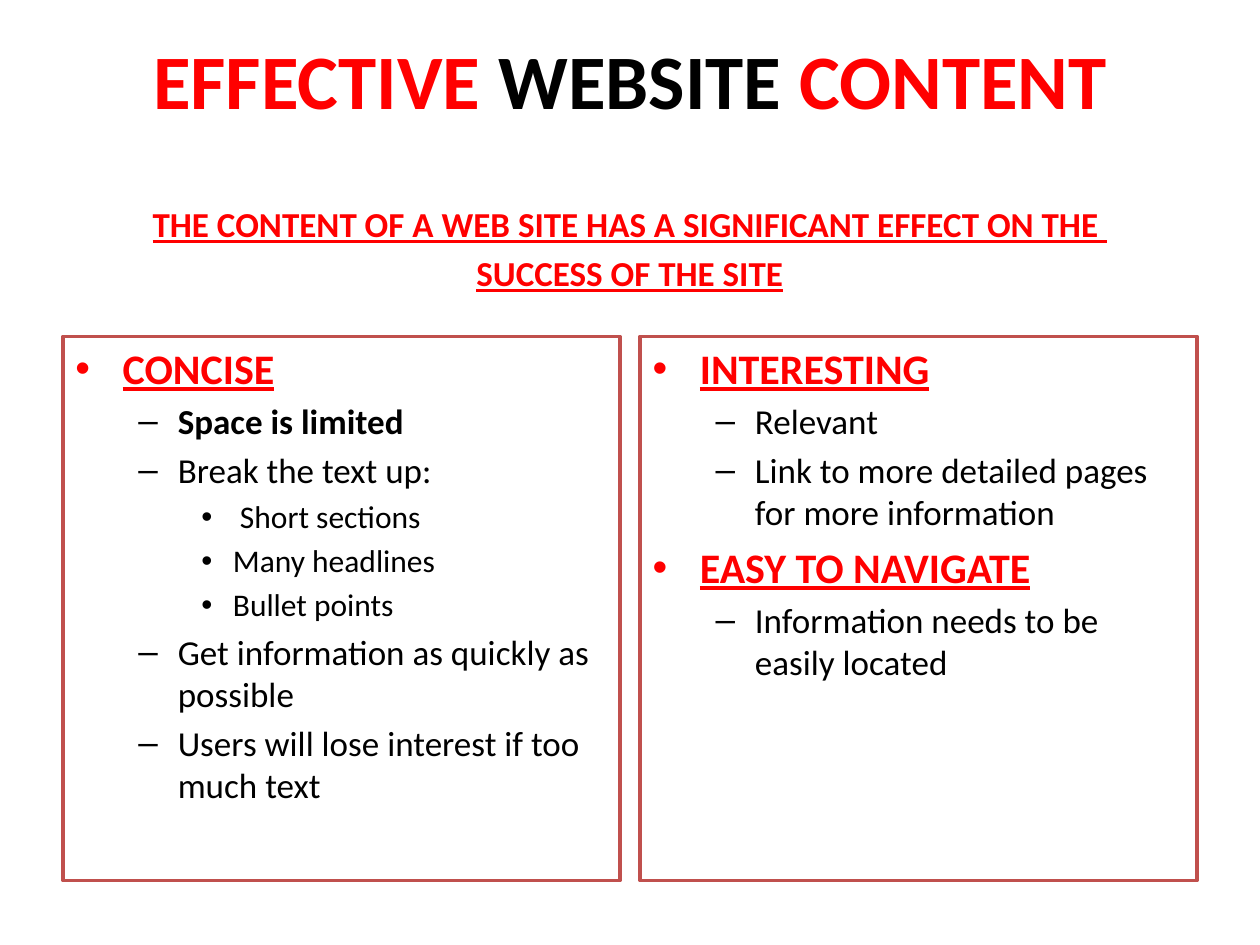
from lxml.etree import SubElement
from pptx import Presentation
from pptx.dml.color import RGBColor
from pptx.enum.shapes import MSO_SHAPE as Shape
from pptx.enum.text import MSO_ANCHOR as Anchor, MSO_AUTO_SIZE as AutoSize, PP_ALIGN as Align
from pptx.oxml.ns import qn
from pptx.util import Pt

RED = RGBColor(0xFF, 0x00, 0x00)
BLACK = RGBColor(0x00, 0x00, 0x00)
WHITE = RGBColor(0xFF, 0xFF, 0xFF)
BORDER = RGBColor(0xC0, 0x50, 0x4D)
FONT = "Calibri"

MARGIN = 36
CONTENT_WIDTH = 648
PANEL_TOP, PANEL_WIDTH, PANEL_HEIGHT = 192.2, 318.2, 311

# Per outline level: font size, left margin, hanging indent, bullet
LEVELS = [(24, 27, 27, "•"), (20, 58.5, 22.5, "–"), (18, 90, 18, "•")]

TITLE = [("EFFECTIVE", RED), (" WEBSITE ", BLACK), ("CONTENT", RED)]
SUBTITLE = [
    "THE CONTENT OF A WEB SITE HAS A SIGNIFICANT EFFECT ON THE ",
    "SUCCESS OF THE SITE",
]
CONCISE = [
    (0, "CONCISE", True),
    (1, "Space is limited", True),
    (1, "Break the text up:", False),
    (2, " Short sections", False),
    (2, "Many headlines", False),
    (2, "Bullet points", False),
    (1, "Get information as quickly as possible", False),
    (1, "Users will lose interest if too much text", False),
]
INTERESTING = [
    (0, "INTERESTING", True),
    (1, "Relevant", False),
    (1, "Link to more detailed pages for more information", False),
    (0, "EASY TO NAVIGATE", True),
    (1, "Information needs to be easily located", False),
]


def add_run(paragraph, text, size, color, bold=False, underline=False):
    """Append one formatted run to the paragraph."""
    run = paragraph.add_run()
    run.text = text
    font = run.font
    font.name, font.size = FONT, Pt(size)
    font.bold, font.underline = bold, underline
    font.color.rgb = color


def next_paragraph(frame, index):
    """Return the first paragraph of the frame, or a new one after it."""
    return frame.add_paragraph() if index else frame.paragraphs[0]


def set_bullet(paragraph, margin, hanging, bullet):
    """Give the paragraph a hanging indent and a bullet character."""
    properties = paragraph._p.get_or_add_pPr()
    properties.set("marL", str(Pt(margin)))
    properties.set("indent", str(-Pt(hanging)))
    SubElement(properties, qn("a:buFont")).set("typeface", "Arial")
    SubElement(properties, qn("a:buChar")).set("char", bullet)


def format_title(title):
    """Place the title placeholder and fill in its coloured words."""
    title.left, title.top = Pt(MARGIN), Pt(0)
    title.width, title.height = Pt(CONTENT_WIDTH), Pt(90)
    frame = title.text_frame
    frame.auto_size = AutoSize.NONE
    frame.vertical_anchor = Anchor.MIDDLE
    heading = frame.paragraphs[0]
    heading.alignment = Align.CENTER
    for text, color in TITLE:
        add_run(heading, text, 44, color, bold=True)


def add_subtitle(slide):
    """Add the underlined statement below the title."""
    subtitle = slide.shapes.add_textbox(Pt(MARGIN), Pt(121), Pt(CONTENT_WIDTH), Pt(50.4))
    frame = subtitle.text_frame
    frame.word_wrap = True
    frame.vertical_anchor = Anchor.BOTTOM
    for index, text in enumerate(SUBTITLE):
        line = next_paragraph(frame, index)
        line.alignment = Align.CENTER
        line.space_before = Pt(4)
        add_run(line, text, 20, RED, bold=True, underline=True)


def add_panel(slide, left, items):
    """Add a bordered panel holding a bulleted outline."""
    panel = slide.shapes.add_shape(
        Shape.RECTANGLE, Pt(left), Pt(PANEL_TOP), Pt(PANEL_WIDTH), Pt(PANEL_HEIGHT))
    panel.shadow.inherit = False
    panel.fill.solid()
    panel.fill.fore_color.rgb = WHITE
    panel.line.color.rgb = BORDER
    panel.line.width = Pt(2)
    frame = panel.text_frame
    frame.word_wrap = True
    frame.vertical_anchor = Anchor.TOP
    for index, (level, text, bold) in enumerate(items):
        size, margin, hanging, bullet = LEVELS[level]
        heading = level == 0
        point = next_paragraph(frame, index)
        point.level = level
        point.alignment = Align.LEFT
        point.space_before = Pt(size * 0.2)
        set_bullet(point, margin, hanging, bullet)
        add_run(point, text, size, RED if heading else BLACK, bold, heading)


def main():
    """Build the slide and save it."""
    deck = Presentation()
    deck.slide_width, deck.slide_height = Pt(720), Pt(540)
    slide = deck.slides.add_slide(deck.slide_layouts[5])
    format_title(slide.shapes.title)
    add_subtitle(slide)
    add_panel(slide, MARGIN, CONCISE)
    add_panel(slide, MARGIN + CONTENT_WIDTH - PANEL_WIDTH, INTERESTING)
    deck.save("out.pptx")


if __name__ == "__main__":
    main()
